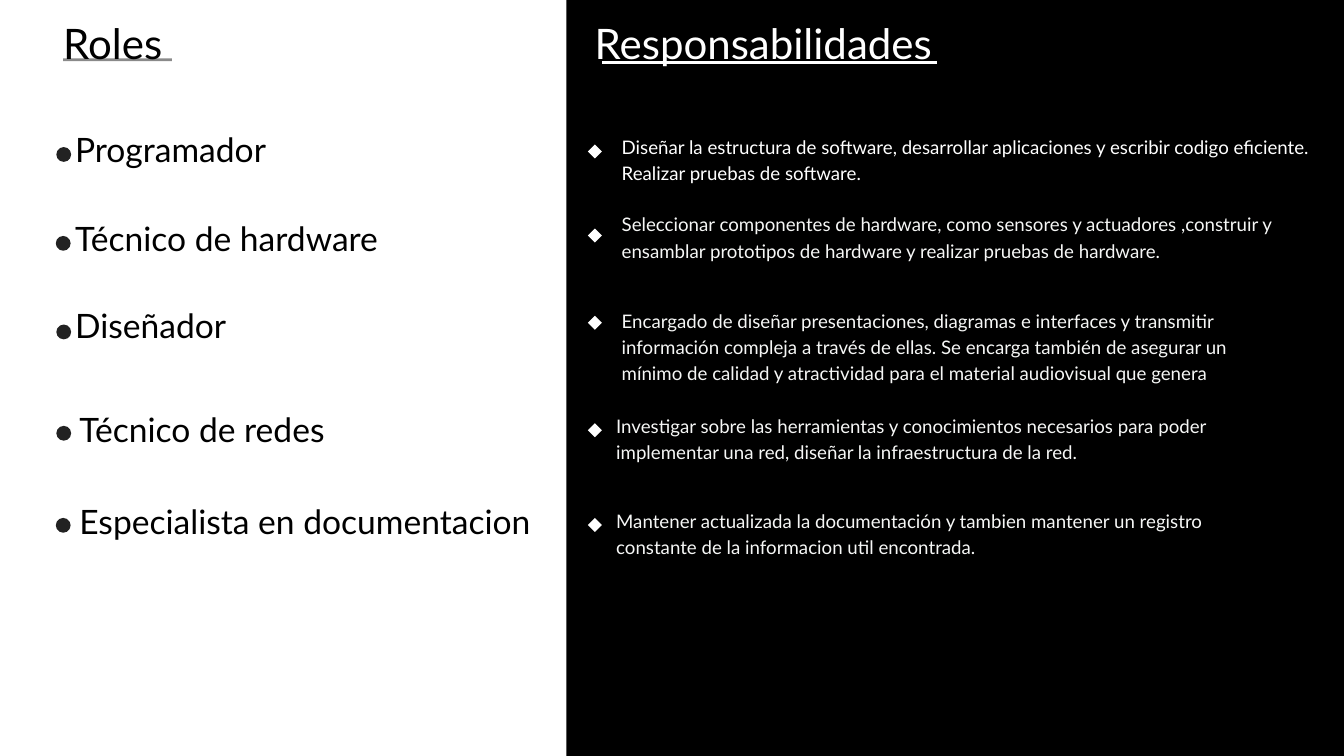
from lxml import etree
from pptx import Presentation
from pptx.dml.color import RGBColor
from pptx.enum.shapes import MSO_CONNECTOR, MSO_SHAPE
from pptx.oxml.ns import qn
from pptx.util import Cm, Pt

RECTANGLE, OVAL, DIAMOND = MSO_SHAPE.RECTANGLE, MSO_SHAPE.OVAL, MSO_SHAPE.DIAMOND
STRAIGHT = MSO_CONNECTOR.STRAIGHT
COLORS = {"black": "000000", "white": "FFFFFF", "soft": "F6F7F6", "dot": "222222"}
FONT = "Lato"
WIDTH, HEIGHT = 50.8, 28.58
PANEL_LEFT = 21.41
DOT_SIZE, DIAMOND_SIZE, DIAMOND_LEFT = 0.56, 0.53, 22.22
LINE_HEIGHT = 0.97

ROLES = [
    ("Programador", 2.13, 5.56, 2.84, 5.77, 14.66),
    ("Técnico de hardware", 2.11, 8.92, 2.84, 9.12, 17.17),
    ("Diseñador", 2.13, 12.27, 2.84, 12.42, 16.74),
    ("Técnico de redes", 2.13, 16.1, 3, 16.33, 16.74),
    ("Especialista en documentacion", 2.11, 19.58, 3, 19.81, 18.95),
]

DUTIES = [
    (["Diseñar la estructura de software, desarrollar aplicaciones y escribir codigo eficiente.",
      "Realizar pruebas de software."], 5.46, 23.5, 4.98, 26.14, 2, "white"),
    (["Seleccionar componentes de hardware, como sensores y actuadores ,construir y "
      "ensamblar prototipos de hardware y realizar pruebas de hardware."],
     8.64, 23.5, 7.92, 25.32, 2, "soft"),
    (["Encargado de diseñar presentaciones, diagramas e interfaces y transmitir "
      "información compleja a través de ellas. Se encarga también de asegurar un "
      "mínimo de calidad y atractividad para el material audiovisual que genera"],
     11.94, 23.5, 11.56, 25.32, 3, "soft"),
    (["Investigar sobre las herramientas y conocimientos necesarios para poder "
      "implementar una red, diseñar la infraestructura de la red."],
     16, 23.29, 15.54, 25.32, 2, "soft"),
    (["Mantener actualizada la documentación y tambien mantener un registro "
      "constante de la informacion util encontrada."],
     19.58, 23.29, 19.13, 25.32, 2, "soft"),
]


class SlideBuilder:
    """Draws styled elements on the current slide."""

    def __init__(self, slide):
        self.slide = slide

    def color(self, name):
        return RGBColor.from_string(COLORS[name])

    def shape(self, kind, left, top, width, height, color):
        shape = self.slide.shapes.add_shape(kind, Cm(left), Cm(top), Cm(width), Cm(height))
        shape.shadow.inherit = False
        shape.fill.solid()
        shape.fill.fore_color.rgb = self.color(color)
        shape.line.fill.background()

    def text(self, lines, left, top, width, height, size, spacing, color):
        box = self.slide.shapes.add_textbox(Cm(left), Cm(top), Cm(width), Cm(height))
        frame = box.text_frame
        frame.word_wrap = True
        frame.margin_left = frame.margin_right = frame.margin_top = frame.margin_bottom = 0
        for index, line in enumerate(lines):
            para = frame.add_paragraph() if index else frame.paragraphs[0]
            para.line_spacing = Pt(spacing)
            span = para.add_run()
            span.text = line
            span.font.name = FONT
            span.font.size = Pt(size)
            span.font.color.rgb = self.color(color)

    def underline(self, left, right, top, color, opacity=100):
        line = self.slide.shapes.add_connector(STRAIGHT, Cm(left), Cm(top), Cm(right), Cm(top))
        line.line.width = Pt(3)
        line.line.color.rgb = self.color(color)
        properties = line._element.spPr
        if opacity < 100:
            tint = properties.find(".//" + qn("a:srgbClr"))
            etree.SubElement(tint, qn("a:alpha")).set("val", str(opacity * 1000))
        etree.SubElement(properties, qn("a:effectLst"))


def main():
    deck = Presentation()
    deck.slide_width, deck.slide_height = Cm(WIDTH), Cm(HEIGHT)
    page = SlideBuilder(deck.slides.add_slide(deck.slide_layouts[6]))

    page.shape(RECTANGLE, PANEL_LEFT, 0, WIDTH - PANEL_LEFT, HEIGHT, "black")
    page.text(["Roles"], 2.39, 0.33, 8.99, 2.08, 45, 63, "black")
    page.text(["Responsabilidades"], 22.48, 0.33, 15.72, 2.08, 45, 63, "white")

    for role, dot_left, dot_top, left, top, width in ROLES:
        page.shape(OVAL, dot_left, dot_top, DOT_SIZE, DOT_SIZE, "dot")
        page.text([role], left, top, width, 0.81, 36, 18, "black")

    for lines, diamond_top, left, top, width, rows, color in DUTIES:
        page.shape(DIAMOND, DIAMOND_LEFT, diamond_top, DIAMOND_SIZE, DIAMOND_SIZE, "white")
        page.text(lines, left, top, width, rows * LINE_HEIGHT, 20, 28, color)

    page.underline(22.76, 35.41, 2.36, "white")
    page.underline(2.39, 6.5, 2.26, "black", 45)
    deck.save("out.pptx")


if __name__ == "__main__":
    main()
